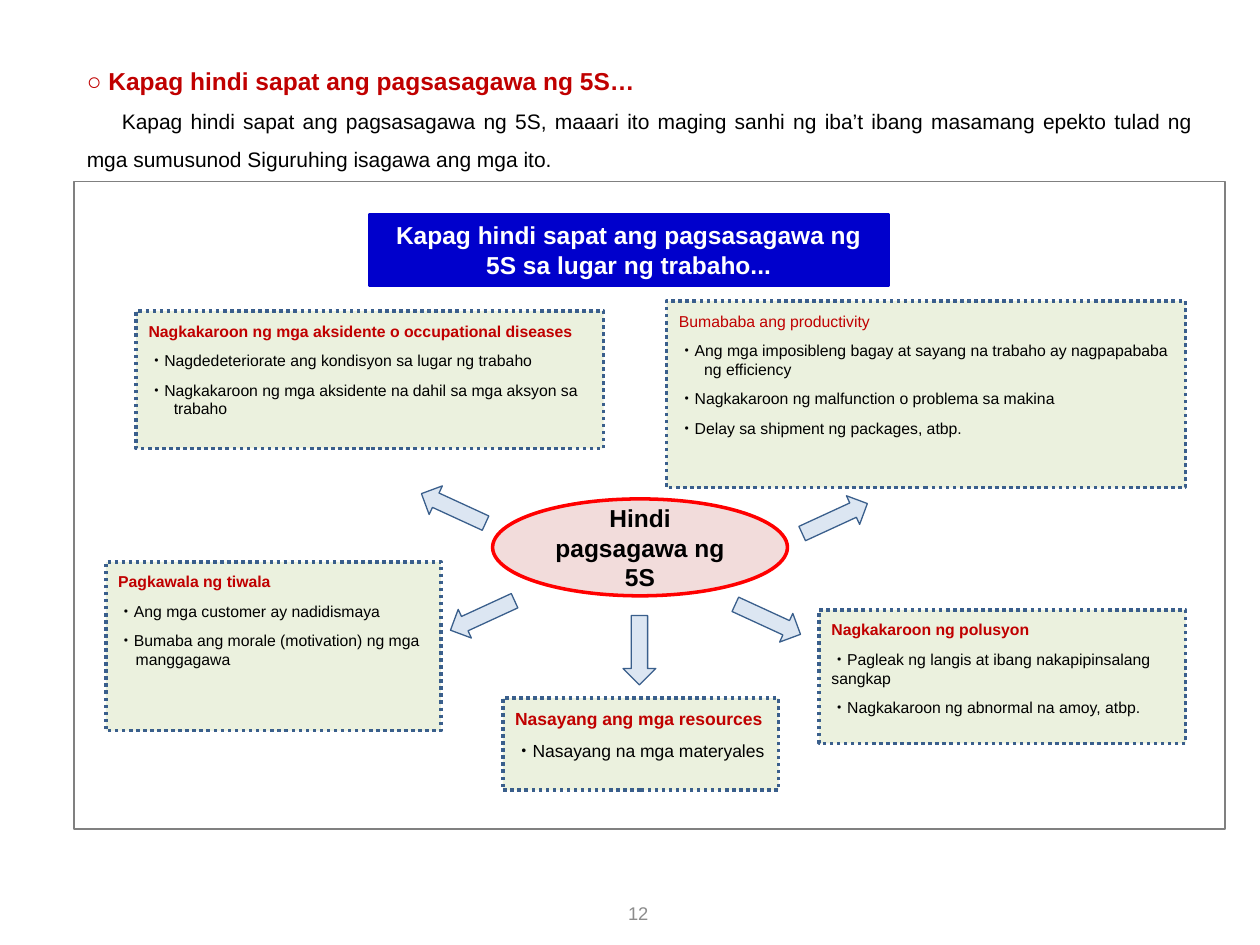
"""Build the slide on what happens when 5S is not practised well enough."""
from pptx import Presentation
from pptx.dml.color import RGBColor
from pptx.enum.dml import MSO_LINE
from pptx.enum.shapes import MSO_SHAPE
from pptx.enum.text import MSO_ANCHOR, PP_ALIGN
from pptx.util import Pt

RECTANGLE, OVAL, ARROW = MSO_SHAPE.RECTANGLE, MSO_SHAPE.OVAL, MSO_SHAPE.LEFT_ARROW
TOP, MIDDLE = MSO_ANCHOR.TOP, MSO_ANCHOR.MIDDLE
LEFT, CENTER, JUSTIFY = PP_ALIGN.LEFT, PP_ALIGN.CENTER, PP_ALIGN.JUSTIFY
DOTTED = MSO_LINE.ROUND_DOT

BLACK = RGBColor(0x00, 0x00, 0x00)
WHITE = RGBColor(0xFF, 0xFF, 0xFF)
GRAY = RGBColor(0x80, 0x80, 0x80)
NUMBER_GRAY = RGBColor(0x8C, 0x8C, 0x8C)
DARK_RED = RGBColor(0xC0, 0x00, 0x00)
RED = RGBColor(0xFF, 0x00, 0x00)
PINK = RGBColor(0xF2, 0xDC, 0xDB)
BLUE = RGBColor(0x00, 0x00, 0xCC)
STEEL = RGBColor(0x3A, 0x5F, 0x8C)
PALE_BLUE = RGBColor(0xDC, 0xE6, 0xF2)
PALE_GREEN = RGBColor(0xEB, 0xF1, 0xDE)

FONT = "Arial"
HANG, SHORT_HANG = 14.4, 10
TILT = 24.7

HEADING = "○ Kapag hindi sapat ang pagsasagawa ng 5S…"
INTRO = ("Kapag hindi sapat ang pagsasagawa ng 5S, maaari ito maging sanhi ng iba’t ibang "
         "masamang epekto tulad ng mga sumusunod Siguruhing isagawa ang mga ito.")
BANNER = "Kapag hindi sapat ang pagsasagawa ng 5S sa lugar ng trabaho..."
CAUSE = "Hindi pagsagawa ng 5S"
PAGE_NUMBER = "12"

EFFECTS = [
    dict(place=(77.8, 177.8, 267.1, 78.5),
         title="Nagkakaroon ng mga aksidente o occupational diseases",
         items=[("Nagdedeteriorate ang kondisyon sa lugar ng trabaho", 0),
                ("Nagkakaroon ng mga aksidente na dahil sa mga aksyon sa trabaho", HANG)]),
    dict(place=(380.9, 172.1, 296.6, 106.6), bold=False,
         title="Bumababa ang productivity",
         items=[("Ang mga imposibleng bagay at sayang na trabaho ay nagpapababa ng efficiency", HANG),
                ("Nagkakaroon ng malfunction o problema sa makina", HANG),
                ("Delay sa shipment ng packages, atbp.", HANG)]),
    dict(place=(60.5, 321.1, 191.5, 96.5),
         title="Pagkawala ng tiwala",
         items=[("Ang mga customer ay nadidismaya", HANG),
                ("Bumaba ang morale (motivation) ng mga manggagawa", SHORT_HANG)]),
    dict(place=(287.3, 398.9, 157.7, 52.6), size=10, align=JUSTIFY,
         title="Nasayang ang mga resources",
         items=[("Nasayang na mga materyales", 0)]),
    dict(place=(468, 348.5, 209.5, 76.3),
         title="Nagkakaroon ng polusyon",
         items=[("Pagleak ng langis at ibang nakapipinsalang sangkap", 0),
                ("Nagkakaroon ng abnormal na amoy, atbp.", HANG)]),
]

ARROWS = [
    ((239, 281.5, 40.3, 18), TILT),
    ((255.6, 342.7, 40.3, 18), 360 - TILT),
    ((456.5, 287.3, 41, 18), 180 - TILT),
    ((418.3, 344.9, 41, 18), 180 + TILT),
    ((345.6, 362.2, 39.6, 18.7), 270),
]


def add_figure(page, kind, place, fill, line, weight, dash=None):
    figure = page.shapes.add_shape(kind, *map(Pt, place))
    figure.shadow.inherit = False
    if fill is None:
        figure.fill.background()
    else:
        figure.fill.solid()
        figure.fill.fore_color.rgb = fill
    figure.line.color.rgb = line
    figure.line.width = Pt(weight)
    if dash is not None:
        figure.line.dash_style = dash
    return figure


def set_paragraph(paragraph, text, size, color, bold=False, align=LEFT, before=0,
                  spacing=None, margin=0, indent=0):
    paragraph.text = text
    paragraph.alignment = align
    paragraph.space_before = Pt(before)
    paragraph.line_spacing = spacing
    if margin or indent:
        properties = paragraph._p.get_or_add_pPr()
        properties.set("marL", str(Pt(margin)))
        properties.set("indent", str(Pt(indent)))
    for span in paragraph.runs:
        span.font.name = FONT
        span.font.size = Pt(size)
        span.font.bold = bold
        span.font.color.rgb = color


def prepare_frame(shape, anchor):
    frame = shape.text_frame
    frame.word_wrap = True
    frame.vertical_anchor = anchor
    return frame


def add_effect(page, place, title, items, size=9, bold=True, align=LEFT):
    box = add_figure(page, RECTANGLE, place, PALE_GREEN, STEEL, 2, DOTTED)
    frame = prepare_frame(box, TOP)
    frame.margin_top = Pt(5.8)
    set_paragraph(frame.paragraphs[0], title, size, DARK_RED, bold, align)
    for text, hang in items:
        set_paragraph(frame.add_paragraph(), "・" + text, size, BLACK, align=align,
                      before=6, margin=hang, indent=-hang)


def main():
    deck = Presentation()
    deck.slide_width, deck.slide_height = Pt(720), Pt(540)
    page = deck.slides.add_slide(deck.slide_layouts[6])

    add_figure(page, RECTANGLE, (42.5, 103.7, 657.4, 370.1), None, GRAY, 1)
    banner = add_figure(page, RECTANGLE, (211, 122.4, 296.6, 41), BLUE, BLUE, 1.5)
    set_paragraph(prepare_frame(banner, TOP).paragraphs[0], BANNER, 14, WHITE, True, CENTER)
    cause = add_figure(page, OVAL, (281.5, 285.1, 168.5, 55.4), PINK, RED, 2)
    set_paragraph(prepare_frame(cause, MIDDLE).paragraphs[0], CAUSE, 14, BLACK, True, CENTER)

    for effect in EFFECTS:
        add_effect(page, **effect)
    for place, angle in ARROWS:
        add_figure(page, ARROW, place, PALE_BLUE, STEEL, 0.75).rotation = angle

    intro = page.shapes.add_textbox(*map(Pt, (42.5, 25.9, 646.6, 73.4)))
    frame = prepare_frame(intro, TOP)
    set_paragraph(frame.paragraphs[0], HEADING, 14, DARK_RED, True, JUSTIFY, spacing=1.5)
    set_paragraph(frame.add_paragraph(), INTRO, 12, BLACK, align=JUSTIFY, spacing=1.5, indent=20)

    number = page.shapes.add_textbox(*map(Pt, (280.8, 507.6, 167.8, 28.8)))
    set_paragraph(prepare_frame(number, MIDDLE).paragraphs[0], PAGE_NUMBER, 10.5,
                  NUMBER_GRAY, align=CENTER)
    deck.save("out.pptx")


if __name__ == "__main__":
    main()
